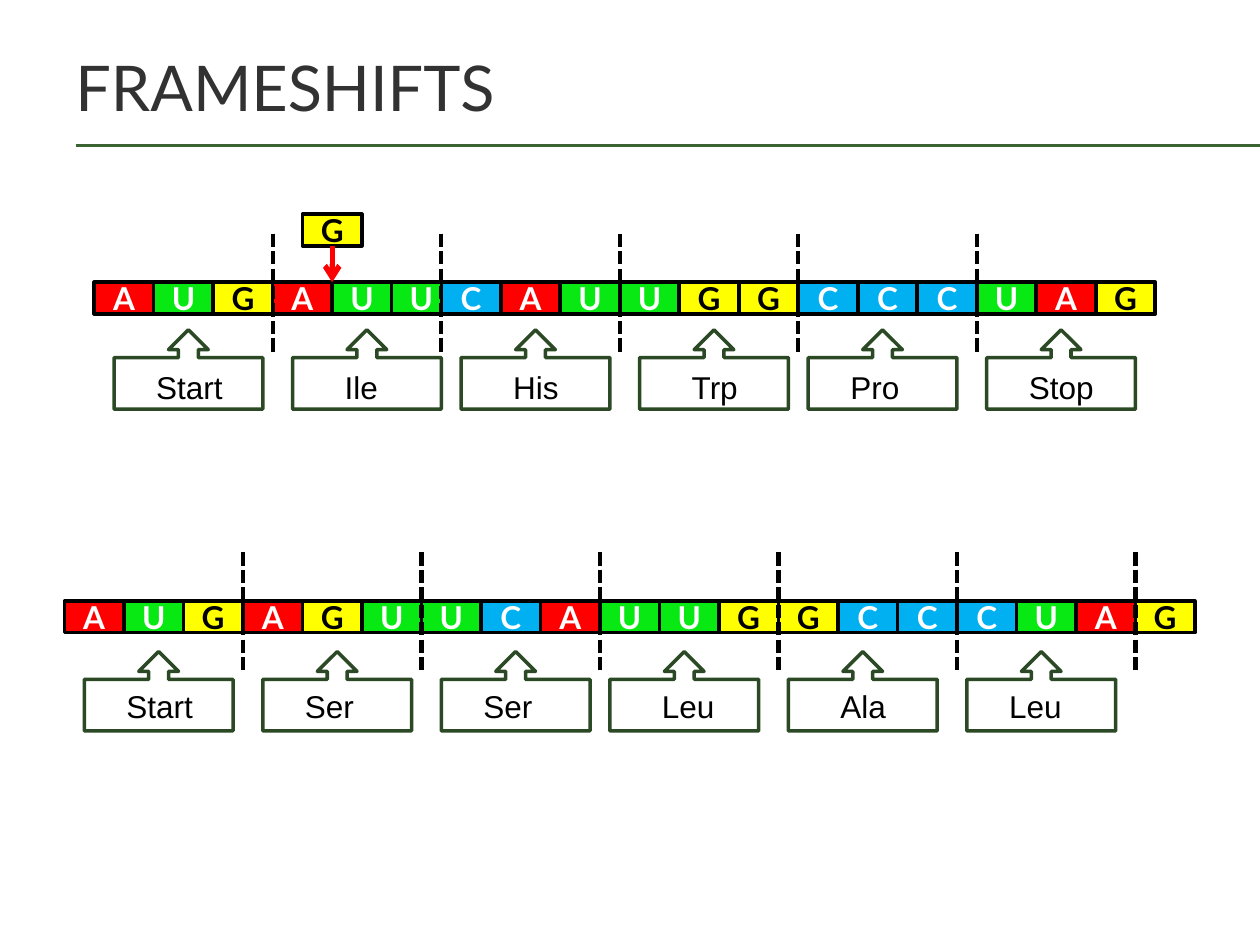
from lxml import etree
from pptx import Presentation
from pptx import util as u
from pptx.dml.color import RGBColor
from pptx.enum import dml, shapes, text
from pptx.oxml.ns import qn

STEP = 8.5 / 108          # grid step in inches
CELL = 6                  # steps per base
CELL_H = 3.2
CODON = 3 * CELL
BASES = {"A": ("FF0000", "FFFFFF"), "U": ("08E813", "FFFFFF"),
         "C": ("00B0F0", "FFFFFF"), "G": ("FFFF00", "000000")}
LABEL_WIDTHS = (10, 8, 9, 8, 9, 10)


def steps(n):
    return u.Inches(n * STEP)


def color(value):
    return RGBColor.from_string(value)


def set_font(p, name, size, value, bold=False):
    p.font.name, p.font.size, p.font.bold = name, u.Pt(size), bold
    p.font.color.rgb = color(value)


def add_line(parent, x1, y1, x2, y2, value, width):
    c = parent.add_connector(shapes.MSO_CONNECTOR.STRAIGHT, x1, y1, x2, y2)
    c.line.color.rgb = color(value)
    c.line.width = u.Pt(width)
    etree.SubElement(c._element.spPr, qn("a:effectLst"))
    return c


def add_base(parent, base, x, y):
    fill, ink = BASES[base]
    sp = parent.add_shape(shapes.MSO_SHAPE.RECTANGLE, steps(x), y,
                          steps(CELL), steps(CELL_H))
    sp.shadow.inherit = False
    sp.fill.solid()
    sp.fill.fore_color.rgb = color(fill)
    sp.line.color.rgb = color("000000")
    sp.line.width = u.Pt(2)
    tf = sp.text_frame
    tf.vertical_anchor = text.MSO_ANCHOR.MIDDLE
    p = tf.paragraphs[0]
    p.text = base
    p.alignment = text.PP_ALIGN.CENTER
    set_font(p, "Lato", 18, ink, True)
    return sp


def add_amino(parent, name, x, y, label_x, label_y, label_w):
    """Up-arrow callout with its amino acid label."""
    sp = parent.add_shape(shapes.MSO_SHAPE.UP_ARROW_CALLOUT, steps(x), y,
                          steps(2.5 * CELL), steps(8))
    sp.shadow.inherit = False
    sp.fill.background()
    sp.line.color.rgb = color("2B4924")
    sp.line.width = u.Pt(2)
    tb = parent.add_textbox(steps(label_x), label_y, steps(label_w), steps(5.1))
    tb.text_frame.word_wrap = True
    p = tb.text_frame.paragraphs[0]
    p.text = name
    set_font(p, "Arial", 18, "000000")


def add_strand(s, left, top, bases, overlap_at, aminos, callout_drop):
    """Row of bases; cells from overlap_at on sit one step to the left.

    aminos holds (name, callout shift, label indent) in grid steps.
    """
    grp = s.shapes.add_group_shape().shapes
    xs = [left + i * CELL - (i >= overlap_at) for i in range(len(bases))]
    for base, x in zip(bases, xs):
        add_base(grp, base, x, top)
    for i, ((name, shift, indent), w) in enumerate(zip(aminos, LABEL_WIDTHS)):
        x = left + 2 + i * CODON - shift
        add_amino(grp, name, x, top + steps(callout_drop), x + indent,
                  top + steps(8), w)
    for x in xs[3::3]:
        c = add_line(grp, steps(x), top - steps(4.9), steps(x),
                     top + steps(7.1), "000000", 2.5)
        c.line.dash_style = dml.MSO_LINE.SQUARE_DOT


def add_insertion(s, x, y, base, end_y):
    """Extra base with an arrow to the place where it goes in."""
    sp = add_base(s.shapes, base, x, y)
    mid = steps(x + CELL / 2)
    c = add_line(s.shapes, mid, y + sp.height, mid, end_y, "FF0000", 3)
    c.begin_connect(sp, 2)
    etree.SubElement(c.line._get_or_add_ln(), qn("a:tailEnd"), type="arrow")


def add_title(s, title, w, h):
    for y in (1.15, 1.16):
        add_line(s.shapes, int(w * 0.06), u.Inches(y), w, u.Inches(y), "3A6331", 0.75)
    tb = s.shapes.add_textbox(int(w * 0.05), int(h * 0.03), int(w * 0.95), u.Inches(0.92))
    tf = tb.text_frame
    tf.word_wrap = True
    tf.vertical_anchor = text.MSO_ANCHOR.MIDDLE
    tf.paragraphs[0].text = title
    set_font(tf.paragraphs[0], "Lato", 36, "323232")


def main():
    prs = Presentation()
    prs.slide_width, prs.slide_height = u.Inches(10), u.Inches(7.5)
    s = prs.slides.add_slide(prs.slide_layouts[6])
    add_title(s, "FRAMESHIFTS", prs.slide_width, prs.slide_height)
    normal_top, shifted_top = u.Inches(2.24), u.Inches(4.77)
    add_strand(s, 9.5, normal_top, "AUGAUUCAUUGGCCCUAG", 6,
               [("Start", 0, 3), ("Ile", 0, 4), ("His", 1, 4),
                ("Trp", 1, 4), ("Pro", 2, 3), ("Stop", 2, 3)], 4.8)
    add_strand(s, 6.5, shifted_top, "AUGAGUUCAUUGGCCCUAG", 19,
               [("Start", 0, 3), ("Ser", 0, 3), ("Ser", 0, 3),
                ("Leu", 1, 4), ("Ala", 1, 4), ("Leu", 1, 3)], 5.1)
    add_insertion(s, 30.5, u.Inches(1.7), "G", normal_top)
    prs.save("out.pptx")


if __name__ == "__main__":
    main()
